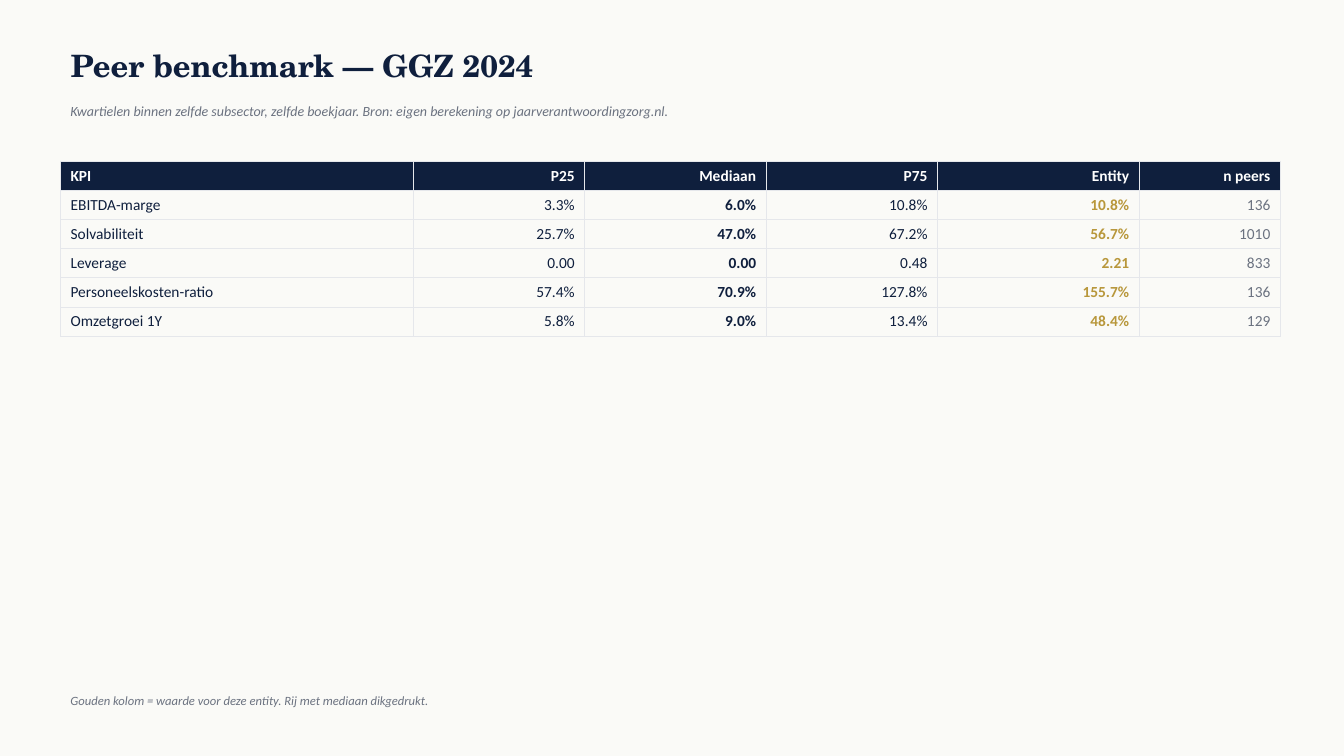
"""Build the peer benchmark slide with its quartile table."""
from dataclasses import dataclass

from lxml.etree import SubElement
from pptx import Presentation
from pptx.dml.color import RGBColor
from pptx.enum.text import MSO_ANCHOR, MSO_AUTO_SIZE, PP_ALIGN
from pptx.oxml.ns import qn
from pptx.util import Emu, Pt


@dataclass(frozen=True)
class Theme:
    paper: str = "FAFAF7"
    navy: str = "0F1F3D"
    gold: str = "B8973B"
    gray: str = "6B7280"
    rule: str = "E5E7EB"
    white: str = "FFFFFF"
    serif: str = "TeX Gyre Schola"
    sans: str = "Calibri"
    title: int = 22
    lead: int = 10
    body: int = 11
    note: int = 9


theme = Theme()
PX = 9144
LEFT, WIDE = 60, 1200


def style(para, text, size, color, face=theme.sans, bold=False, slant=False, align=PP_ALIGN.LEFT):
    para.text = text
    para.alignment = align
    font = para.font
    font.name, font.size = face, Pt(size)
    font.bold, font.italic = bold, slant
    font.color.rgb = RGBColor.from_string(color)


def place(shape, top, high):
    shape.left, shape.top = Emu(LEFT * PX), Emu(top * PX)
    shape.width, shape.height = Emu(WIDE * PX), Emu(high * PX)
    frame = shape.text_frame
    frame.word_wrap = True
    frame.auto_size = MSO_AUTO_SIZE.NONE
    frame.vertical_anchor = MSO_ANCHOR.MIDDLE
    return frame.paragraphs[0]


deck = Presentation()
deck.slide_width, deck.slide_height = Emu(1333 * PX), Emu(750 * PX)
slide = deck.slides.add_slide(deck.slide_layouts[5])
slide.background.fill.solid()
slide.background.fill.fore_color.rgb = RGBColor.from_string(theme.paper)

head = place(slide.shapes.title, 40, 50)
style(head, "Peer benchmark — GGZ 2024", theme.title, theme.navy, theme.serif, bold=True)

captions = [
    (95, theme.lead, "Kwartielen binnen zelfde subsector, zelfde boekjaar. "
                     "Bron: eigen berekening op jaarverantwoordingzorg.nl."),
    (680, theme.note, "Gouden kolom = waarde voor deze entity. Rij met mediaan dikgedrukt."),
]
for top, size, text in captions:
    para = place(slide.shapes.add_textbox(0, 0, 0, 0), top, 30)
    style(para, text, size, theme.gray, slant=True)

columns = [
    ("KPI", 350, theme.navy, False),
    ("P25", 170, theme.navy, False),
    ("Mediaan", 180, theme.navy, True),
    ("P75", 170, theme.navy, False),
    ("Entity", 200, theme.gold, True),
    ("n peers", 140, theme.gray, False),
]
rows = [
    [name for name, *_ in columns],
    ["EBITDA-marge", "3.3%", "6.0%", "10.8%", "10.8%", "136"],
    ["Solvabiliteit", "25.7%", "47.0%", "67.2%", "56.7%", "1010"],
    ["Leverage", "0.00", "0.00", "0.48", "2.21", "833"],
    ["Personeelskosten-ratio", "57.4%", "70.9%", "127.8%", "155.7%", "136"],
    ["Omzetgroei 1Y", "5.8%", "9.0%", "13.4%", "48.4%", "129"],
]
HIGH = 28
total = sum(wide for _, wide, *_ in columns)
table = slide.shapes.add_table(
    len(rows), len(columns), Emu(LEFT * PX), Emu(160 * PX),
    Emu(total * PX), Emu(HIGH * len(rows) * PX)).table
table.horz_banding = False

for c, (_, wide, color, bold) in enumerate(columns):
    table.columns[c].width = Emu(wide * PX)
    align = PP_ALIGN.RIGHT if c else PP_ALIGN.LEFT
    for r, row in enumerate(rows):
        cell = table.cell(r, c)
        props = cell._tc.get_or_add_tcPr()
        for side in ("a:lnL", "a:lnR", "a:lnT", "a:lnB"):
            line = SubElement(props, qn(side), w=str(Pt(0.5)))
            SubElement(SubElement(line, qn("a:solidFill")), qn("a:srgbClr"), val=theme.rule)
        if r == 0:
            cell.fill.solid()
            cell.fill.fore_color.rgb = RGBColor.from_string(theme.navy)
        else:
            cell.fill.background()
        style(cell.text_frame.paragraphs[0], row[c], theme.body,
              color if r else theme.white, bold=bold or r == 0, align=align)

deck.save("out.pptx")
